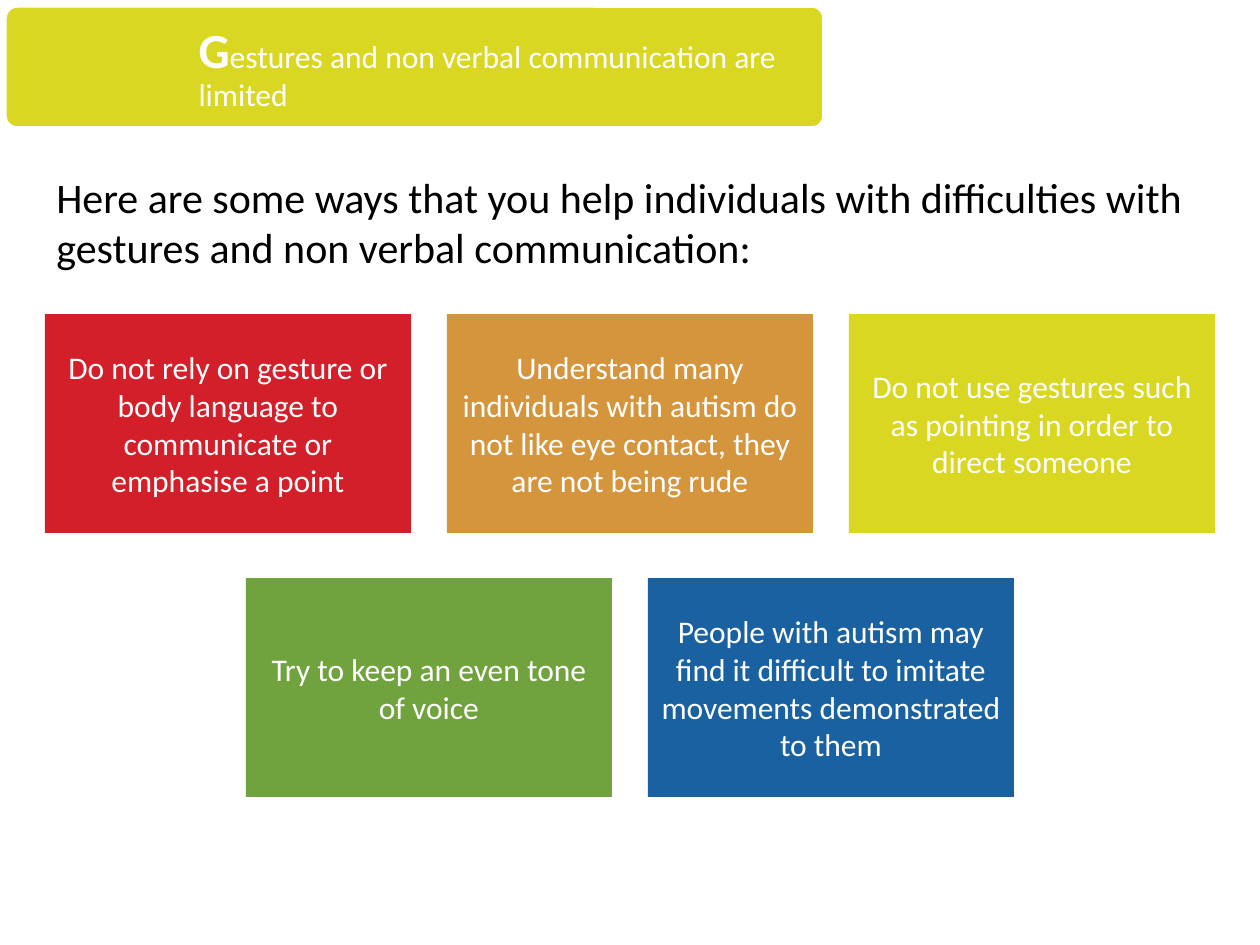
from pptx import Presentation
from pptx.dml.color import RGBColor as RGB
from pptx.enum.shapes import MSO_SHAPE as SHAPE
from pptx.enum.text import MSO_ANCHOR as ANCHOR, PP_ALIGN as ALIGN
from pptx.util import Pt

PX = 914400 / 126
COLORS = {
    "red": "D31F29",
    "orange": "D5953C",
    "yellow": "D9D721",
    "green": "70A33E",
    "blue": "1A61A2",
    "white": "FFFFFF",
    "black": "000000",
}


def px(*lengths):
    return [round(length * PX) for length in lengths]


def add_run(paragraph, text, size, color, bold=False):
    run = paragraph.add_run()
    run.text = text
    for name, value in {"name": "Calibri", "size": Pt(size), "bold": bold}.items():
        setattr(run.font, name, value)
    run.font.color.rgb = RGB.from_string(COLORS[color])


prs = Presentation()
prs.slide_width, prs.slide_height = px(1260, 945)
slide = prs.slides.add_slide(prs.slide_layouts[6])

# Advice cards: three above, two centred below
CARD_W, CARD_H = 366, 219
STEP_X, STEP_Y = 402, 264
TOP = 314
rows = [
    (45, [
        ("red", "Do not rely on gesture or body language to communicate or emphasise a point"),
        ("orange", "Understand many individuals with autism do not like eye contact, they are not being rude"),
        ("yellow", "Do not use gestures such as pointing in order to direct someone"),
    ]),
    (45 + STEP_X // 2, [
        ("green", "Try to keep an even tone of voice"),
        ("blue", "People with autism may find it difficult to imitate movements demonstrated to them"),
    ]),
]
card_margin, = px(9)
card_format = {
    "word_wrap": True,
    "vertical_anchor": ANCHOR.MIDDLE,
    "margin_left": card_margin,
    "margin_right": card_margin,
    "margin_top": card_margin,
    "margin_bottom": card_margin,
}
for row, (left, cards) in enumerate(rows):
    for column, (color, advice) in enumerate(cards):
        card = slide.shapes.add_shape(
            SHAPE.RECTANGLE,
            *px(left + column * STEP_X, TOP + row * STEP_Y, CARD_W, CARD_H))
        card.shadow.inherit = False
        card.fill.solid()
        card.fill.fore_color.rgb = RGB.from_string(COLORS[color])
        card.line.fill.background()
        for name, value in card_format.items():
            setattr(card.text_frame, name, value)
        paragraph = card.text_frame.paragraphs[0]
        paragraph.alignment = ALIGN.CENTER
        add_run(paragraph, advice, 18, "white")

# Introduction
intro = slide.shapes.add_textbox(*px(44, 165, 1171, 115)).text_frame
intro.word_wrap = True
add_run(
    intro.paragraphs[0],
    "Here are some ways that you help individuals with difficulties with "
    "gestures and non verbal communication:",
    24, "black")

# Title banner
banner = slide.shapes.add_shape(SHAPE.ROUNDED_RECTANGLE, *px(5, 6, 819, 122))
banner.adjustments[0] = 0.1
banner.shadow.inherit = False
banner.fill.solid()
banner.fill.fore_color.rgb = RGB.from_string(COLORS["yellow"])
banner.line.color.rgb = RGB.from_string(COLORS["white"])
banner.line.width = Pt(2)
margin_left, margin_right, margin_top, margin_bottom = px(190, 6, 15, 9)
banner_format = {
    "word_wrap": True,
    "vertical_anchor": ANCHOR.MIDDLE,
    "margin_left": margin_left,
    "margin_right": margin_right,
    "margin_top": margin_top,
    "margin_bottom": margin_bottom,
}
for name, value in banner_format.items():
    setattr(banner.text_frame, name, value)
title = banner.text_frame.paragraphs[0]
title.alignment = ALIGN.LEFT
title.line_spacing = 0.9
add_run(title, "G", 28, "white", bold=True)
add_run(title, "estures and non verbal communication are limited", 18, "white")

prs.save("out.pptx")
